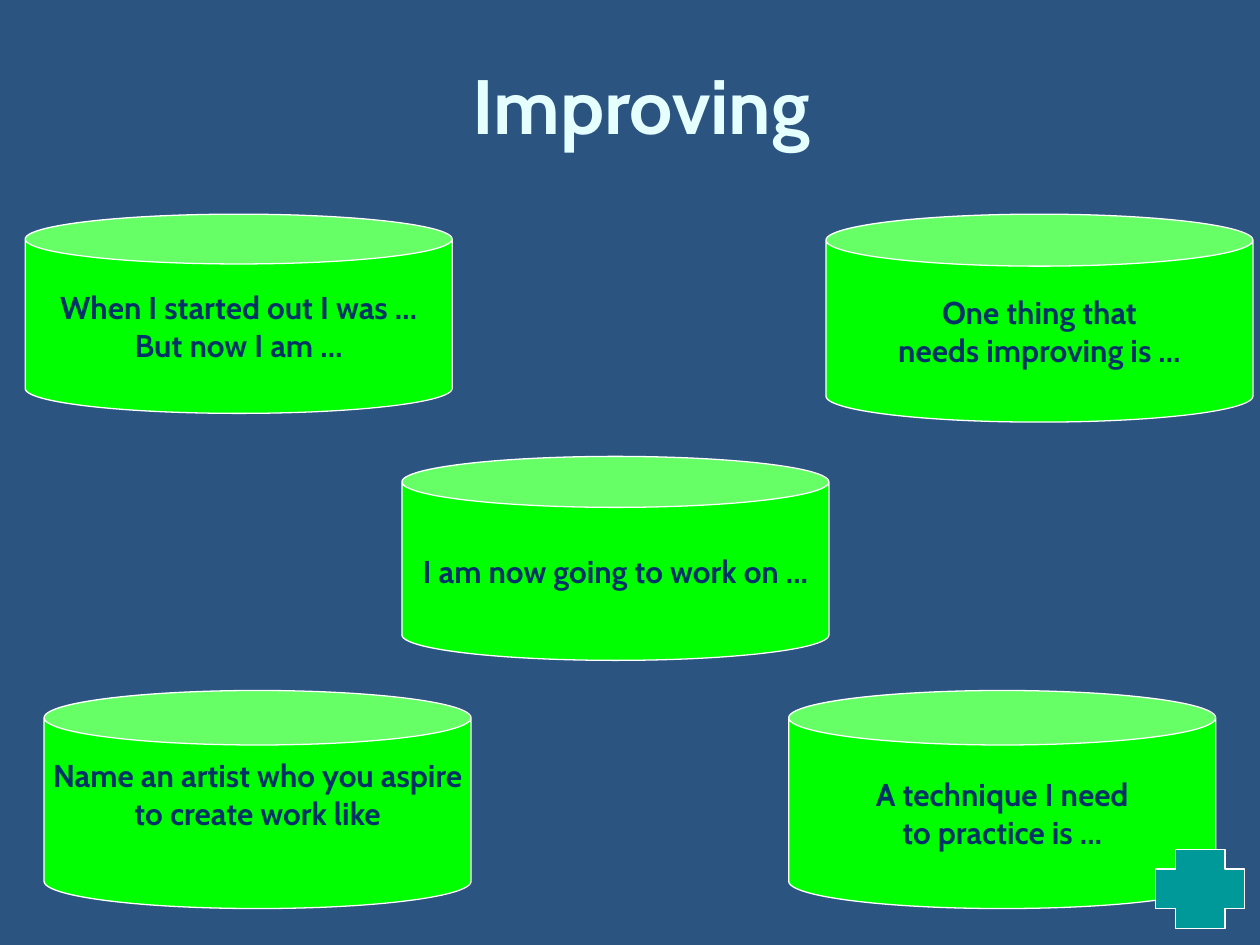
from dataclasses import dataclass

from pptx import Presentation
from pptx import util as u
from pptx.dml.color import RGBColor
from pptx.enum import shapes, text

NAVY = RGBColor(0x2B, 0x54, 0x81)
ICE = RGBColor(0xE5, 0xFF, 0xFF)
GREEN = RGBColor(0x00, 0xFF, 0x00)
INK = RGBColor(0x00, 0x33, 0x66)
TEAL = RGBColor(0x00, 0x99, 0x99)
WHITE = RGBColor(0xFF, 0xFF, 0xFF)

FONT = "Cabin"
CAN_WIDTH = 244
TOP_ROW = 122.4
BOTTOM_ROW = 394.6


@dataclass(frozen=True)
class Prompt:
    left: float
    top: float
    height: float
    lines: tuple[str, ...]
    bottom_inset: float = 3.6


PROMPTS = (
    Prompt(14.4, TOP_ROW, 113.8, ("When I started out I was …", "But now I am …")),
    Prompt(450.7, BOTTOM_ROW, 124.6, ("A technique I need", "to practice is …")),
    Prompt(25.2, BOTTOM_ROW, 124.6,
           ("Name an artist who you aspire", "to create work like"), 25.2),
    Prompt(229.7, 260.8, 116.6, ("I am now going to work on …",)),
    Prompt(472, TOP_ROW, 118.8, ("One thing that", "needs improving is …")),
)


def style_paragraph(p, size: float, color: RGBColor) -> None:
    p.alignment = text.PP_ALIGN.CENTER
    p.font.name = FONT
    p.font.size = u.Pt(size)
    p.font.bold = True
    p.font.color.rgb = color


def add_solid(s, kind, left: float, top: float, width: float, height: float,
              fill: RGBColor):
    sp = s.shapes.add_shape(kind, u.Pt(left), u.Pt(top), u.Pt(width), u.Pt(height))
    sp.shadow.inherit = False
    sp.adjustments[0] = 0.25
    sp.fill.solid()
    sp.fill.fore_color.rgb = fill
    sp.line.color.rgb = WHITE
    sp.line.width = u.Pt(0.75)
    return sp


def add_prompt(s, prompt: Prompt) -> None:
    sp = add_solid(s, shapes.MSO_SHAPE.CAN, prompt.left, prompt.top,
                   CAN_WIDTH, prompt.height, GREEN)
    tf = sp.text_frame
    tf.word_wrap = False
    tf.vertical_anchor = text.MSO_ANCHOR.MIDDLE
    tf.margin_bottom = u.Pt(prompt.bottom_inset)
    tf.text = "\n".join(prompt.lines)
    for p in tf.paragraphs:
        style_paragraph(p, 18, INK)


def add_title(s, title: str) -> None:
    sp = s.shapes.title
    sp.left, sp.top = u.Pt(42.5), u.Pt(5)
    sp.width, sp.height = u.Pt(648), u.Pt(108)
    tf = sp.text_frame
    tf.text = title
    tf.vertical_anchor = text.MSO_ANCHOR.MIDDLE
    style_paragraph(tf.paragraphs[0], 44, ICE)


def main() -> None:
    prs = Presentation()
    prs.slide_width, prs.slide_height = u.Pt(720), u.Pt(540)
    s = prs.slides.add_slide(prs.slide_layouts[5])
    s.background.fill.solid()
    s.background.fill.fore_color.rgb = NAVY
    add_title(s, "Improving")
    for prompt in PROMPTS:
        add_prompt(s, prompt)
    add_solid(s, shapes.MSO_SHAPE.CROSS, 660.2, 485.3, 51.1, 45.4, TEAL)
    prs.save("out.pptx")


if __name__ == "__main__":
    main()
